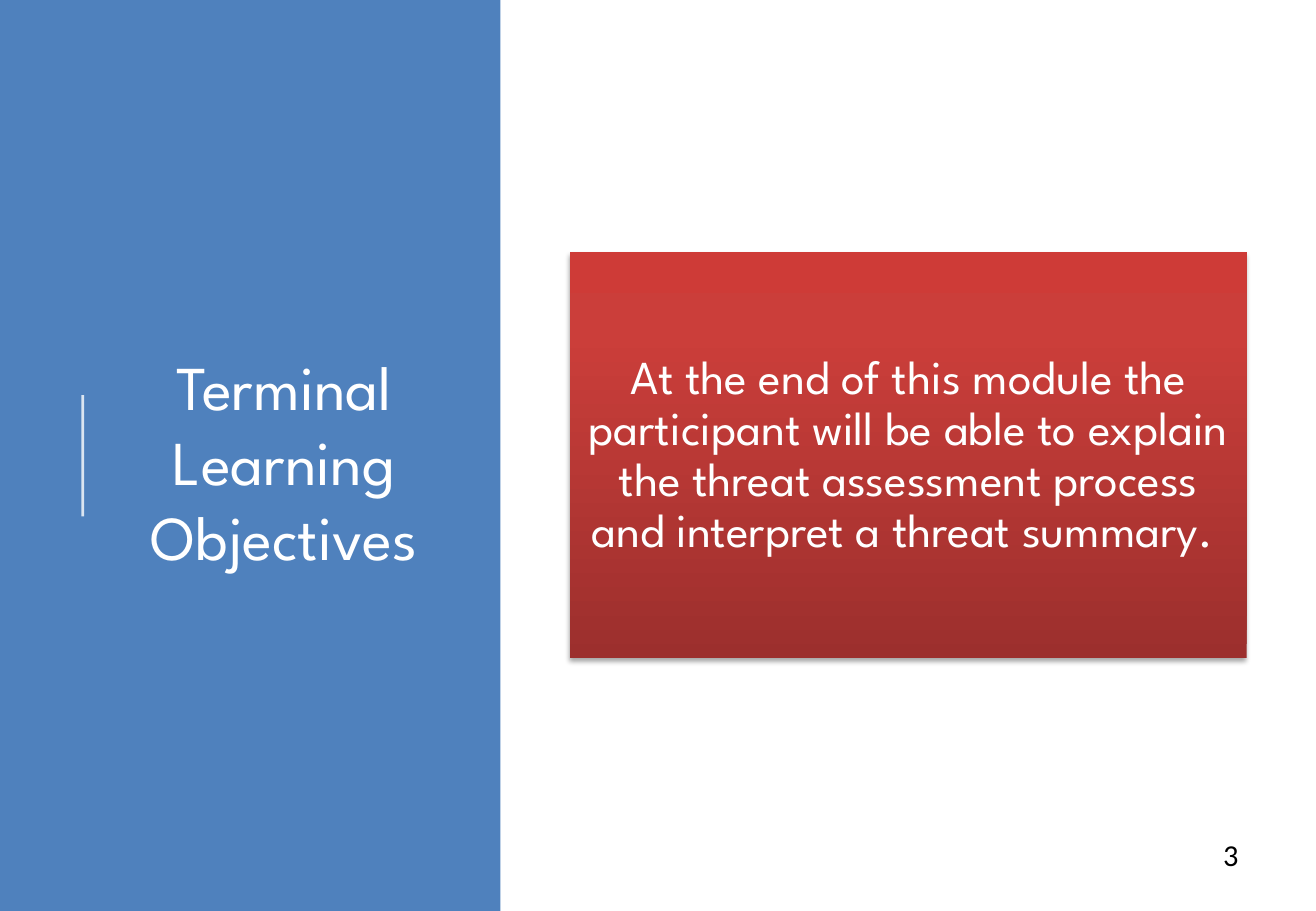
from copy import deepcopy

from lxml.etree import SubElement
from pptx import Presentation
from pptx.dml.color import RGBColor
from pptx.enum.shapes import MSO_CONNECTOR as Connector, MSO_SHAPE as Shape
from pptx.enum.text import MSO_ANCHOR as Anchor, MSO_AUTO_SIZE as AutoSize, PP_ALIGN as Align
from pptx.oxml.ns import qn
from pptx.util import Cm, Pt

BLUE = RGBColor(0x4F, 0x81, 0xBD)
WHITE = RGBColor(0xFF, 0xFF, 0xFF)
BLACK = RGBColor(0x00, 0x00, 0x00)
RED_STOPS = [
    (0, RGBColor(0x9C, 0x2F, 0x2D)),
    (0.8, RGBColor(0xCB, 0x3E, 0x3A)),
    (1, RGBColor(0xCE, 0x3B, 0x37)),
]
HEADING_FONT = "League Spartan"


def write_text(shape, text, font, size, color, align):
    """Fill the shape with one wrapped, vertically centred paragraph."""
    frame = shape.text_frame
    frame.word_wrap = True
    frame.auto_size = AutoSize.NONE
    frame.vertical_anchor = Anchor.MIDDLE
    para = frame.paragraphs[0]
    para.alignment = align
    span = para.add_run()
    span.text = text
    span.font.name = font
    span.font.size = Pt(size)
    span.font.color.rgb = color
    return para


deck = Presentation()
deck.slide_width, deck.slide_height = Cm(27.51), Cm(19.05)
page = deck.slides.add_slide(deck.slide_layouts[5])
shapes = page.shapes

# Blue side panel, kept behind the title
panel = shapes.add_shape(Shape.RECTANGLE, 0, 0, Cm(10.46), deck.slide_height)
panel.shadow.inherit = False
panel.fill.solid()
panel.fill.fore_color.rgb = BLUE
panel.line.fill.background()
title = shapes.title
title._element.addprevious(panel._element)

# Thin translucent rule left of the title
rule = shapes.add_connector(Connector.STRAIGHT, Cm(1.73), Cm(10.8), Cm(1.73), Cm(8.26))
rule.line.color.rgb = WHITE
rule.line.width = Pt(1.5)
SubElement(rule._element.spPr, qn("a:effectLst"))
rule_color = rule._element.spPr.find(".//" + qn("a:srgbClr"))
SubElement(rule_color, qn("a:alpha"), val="80000")

title.left, title.top, title.width, title.height = Cm(2.13), Cm(1.98), Cm(7.62), Cm(15.29)
write_text(title, "Terminal Learning Objectives", HEADING_FONT, 37, WHITE, Align.CENTER)

# Red objective card with a vertical gradient and a soft shadow
card = shapes.add_shape(Shape.RECTANGLE, Cm(11.91), Cm(5.28), Cm(14.15), Cm(8.48))
card.line.fill.background()
card.fill.gradient()
card.fill.gradient_angle = 90
stop_list = card._element.spPr.find(".//" + qn("a:gsLst"))
stop_list.append(deepcopy(stop_list[-1]))
for stop, (position, color) in zip(card.fill.gradient_stops, RED_STOPS):
    stop.position = position
    stop.color.rgb = color

card.shadow.inherit = False
effects = card._element.spPr.find(qn("a:effectLst"))
shadow = SubElement(effects, qn("a:outerShdw"), blurRad=str(Pt(3.1)), dist=str(Pt(1.8)),
                    dir="5400000", rotWithShape="0")
shadow_color = SubElement(shadow, qn("a:srgbClr"), val=str(BLACK))
SubElement(shadow_color, qn("a:alpha"), val="35000")

objective = write_text(
    card,
    "At the end of this module the participant will be able to explain "
    "the threat assessment process and interpret a threat summary. ",
    HEADING_FONT, 28, WHITE, Align.CENTER)
objective.line_spacing = 0.9
card_frame = card.text_frame
card_frame.margin_left = card_frame.margin_right = Cm(0.3)
card_frame.margin_top = card_frame.margin_bottom = Cm(0.3)

page_number = shapes.add_textbox(Cm(19.71), Cm(17.35), Cm(6.43), Cm(1.02))
write_text(page_number, "3", "Calibri", 18, BLACK, Align.RIGHT)

deck.save("out.pptx")
